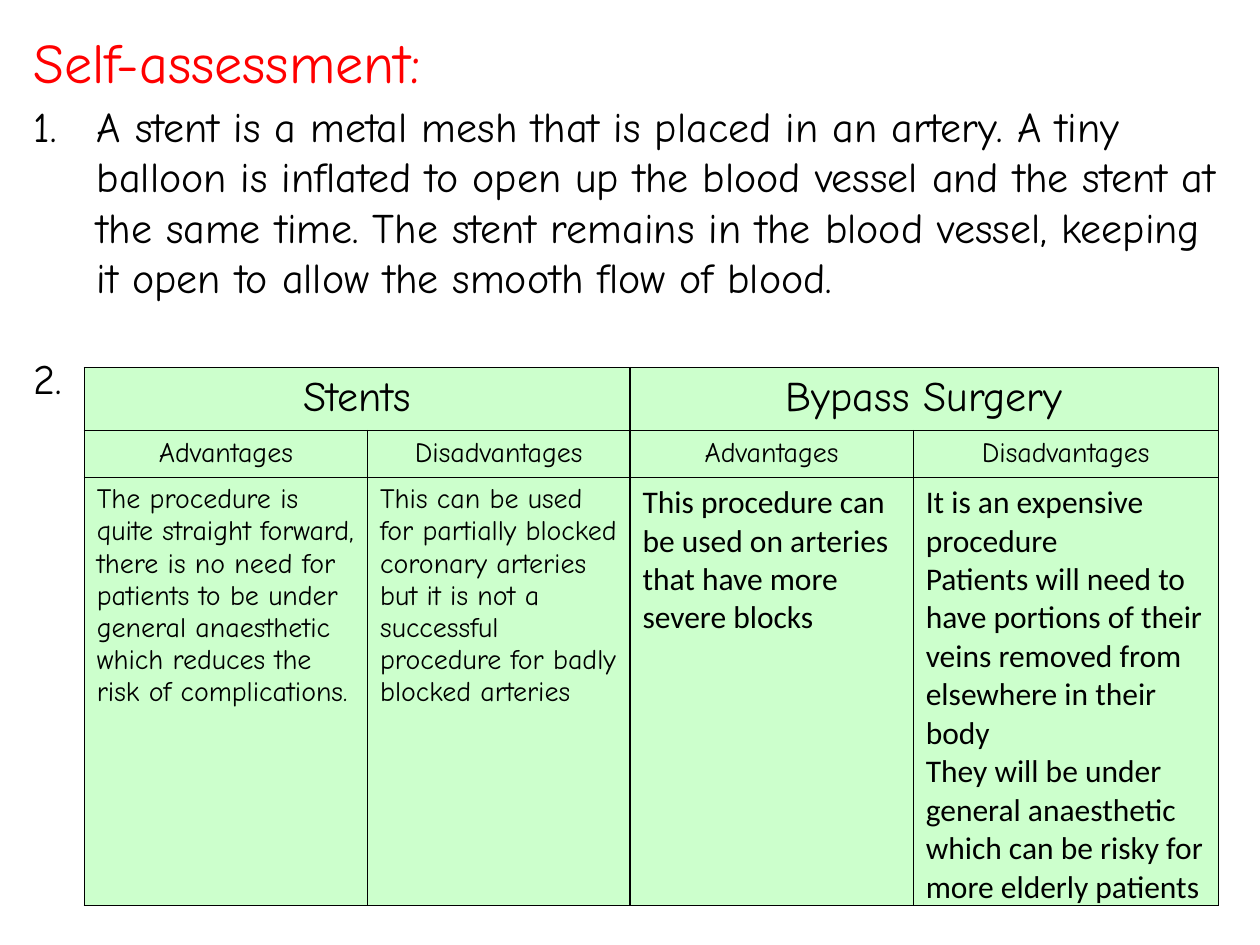
from dataclasses import dataclass

from lxml.etree import SubElement as Sub
from pptx import Presentation as Deck
from pptx.dml.color import RGBColor as Rgb
from pptx.enum.text import MSO_ANCHOR as Anchor, PP_ALIGN as Align
from pptx.oxml.ns import qn
from pptx.util import Cm, Pt

HUES = {"ink": "000000", "title": "FF0000", "cell": "CCFFCC"}
HAND, PLAIN = "Comic Neue", "Calibri"


@dataclass
class Box:
    left: float
    top: float
    width: float
    height: float

    def place(self) -> list:
        return [Cm(n) for n in (self.left, self.top, self.width, self.height)]


@dataclass
class Style:
    size: float
    face: str = HAND
    hue: str = "ink"
    align: Align = Align.LEFT


@dataclass
class Entry:
    row: int
    col: int
    lines: list
    style: Style


TITLE = Style(32, hue="title")
BODY = Style(24)
HEAD = Style(24, align=Align.CENTER)
SUBHEAD = Style(16, align=Align.CENTER)
NOTE = Style(16)
LARGE = Style(18, PLAIN)

ANSWER = (
    "A stent is a metal mesh that is placed in an artery. A tiny balloon is "
    "inflated to open up the blood vessel and the stent at the same time. "
    "The stent remains in the blood vessel, keeping it open to allow the "
    "smooth flow of blood."
)
COLS = [5.71, 5.29, 5.71, 6.15]
ROWS = [1.27, 0.94, 8.63]
ENTRIES = [
    Entry(0, 0, ["Stents"], HEAD),
    Entry(0, 2, ["Bypass Surgery"], HEAD),
    *[Entry(1, col, [("Advantages", "Disadvantages")[col % 2]], SUBHEAD)
      for col in range(4)],
    Entry(2, 0, ["The procedure is quite straight forward, there is no need "
                 "for patients to be under general anaesthetic which reduces "
                 "the risk of complications."], NOTE),
    Entry(2, 1, ["This can be used for partially blocked coronary arteries "
                 "but it is not a successful procedure for badly blocked "
                 "arteries"], NOTE),
    Entry(2, 2, ["This procedure can be used on arteries that have more "
                 "severe blocks"], LARGE),
    Entry(2, 3, ["It is an expensive procedure",
                 "Patients will need to have portions of their veins removed "
                 "from elsewhere in their body",
                 "They will be under general anaesthetic which can be risky "
                 "for more elderly patients"], LARGE),
]


def write(frame, lines: list, style: Style) -> None:
    """Fill a text frame, one paragraph a line."""
    form = {"size": Pt(style.size), "name": style.face, "bold": False}
    for i, line in enumerate(lines):
        para = frame.paragraphs[0] if i == 0 else frame.add_paragraph()
        para.alignment = style.align
        run = para.add_run()
        run.text = line
        for key, value in form.items():
            setattr(run.font, key, value)
        run.font.color.rgb = Rgb.from_string(HUES[style.hue])


def add_text(slide, box: Box, lines: list, style: Style):
    frame = slide.shapes.add_textbox(*box.place()).text_frame
    frame.word_wrap = True
    write(frame, lines, style)
    return frame


def number(para) -> None:
    """Give a paragraph an automatic number with a hanging indent."""
    props = para._p.get_or_add_pPr()
    props.set("marL", str(Cm(1.27)))
    props.set("indent", str(-Cm(1.27)))
    Sub(props, qn("a:buFont"), typeface="+mj-lt")
    Sub(props, qn("a:buAutoNum"), type="arabicPeriod")


def border(cell) -> None:
    props = cell._tc.get_or_add_tcPr()
    for side in ("L", "R", "T", "B"):
        line = Sub(props, qn(f"a:ln{side}"), w=str(Pt(1)))
        fill = Sub(line, qn("a:solidFill"))
        Sub(fill, qn("a:srgbClr"), val=HUES["ink"])


def add_grid(slide, left: float, top: float) -> None:
    box = Box(left, top, sum(COLS), sum(ROWS))
    grid = slide.shapes.add_table(len(ROWS), len(COLS), *box.place()).table
    grid.first_row = grid.horz_banding = False
    for col, width in zip(grid.columns, COLS):
        col.width = Cm(width)
    for row, height in zip(grid.rows, ROWS):
        row.height = Cm(height)
    for cell in grid.iter_cells():
        border(cell)
        cell.fill.solid()
        cell.fill.fore_color.rgb = Rgb.from_string(HUES["cell"])
        cell.vertical_anchor = Anchor.TOP
    for col in (0, 2):
        grid.cell(0, col).merge(grid.cell(0, col + 1))
    for item in ENTRIES:
        write(grid.cell(item.row, item.col).text_frame, item.lines, item.style)


def main() -> None:
    deck = Deck()
    deck.slide_width, deck.slide_height = Cm(25.4), Cm(19.05)
    slide = deck.slides.add_slide(deck.slide_layouts[6])

    # Numbered answers; the table is the second one
    frame = add_text(slide, Box(0.43, 1.9, 24.33, 9.5), [ANSWER, " "], BODY)
    for para in frame.paragraphs:
        number(para)
    frame.paragraphs[1].space_before = Pt(29)

    # Comparison table
    add_grid(slide, 1.7, 7.41)

    # Title
    add_text(slide, Box(0.43, 0.43, 11, 1.63), ["Self-assessment:"], TITLE)

    deck.save("out.pptx")


if __name__ == "__main__":
    main()
